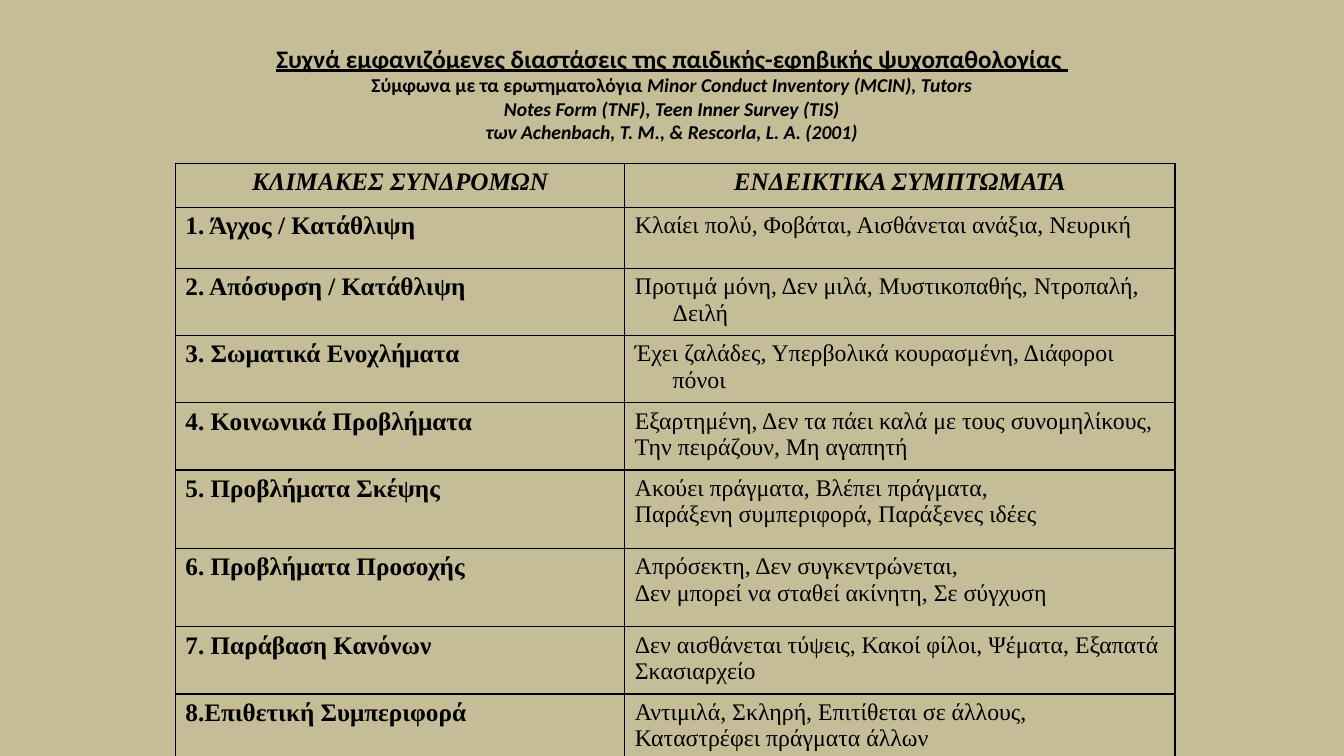
from lxml.etree import SubElement
from pptx import Presentation
from pptx.dml.color import RGBColor
from pptx.enum.text import MSO_ANCHOR, PP_ALIGN
from pptx.oxml.ns import qn
from pptx.util import Pt

SAND = RGBColor(0xC4, 0xBD, 0x97)
BLACK = RGBColor(0, 0, 0)
HEADING_FONT = "Calibri"
TABLE_FONT = "Times New Roman"
HANGING = Pt(27)

HEADING = "Συχνά εμφανιζόμενες διαστάσεις της παιδικής-εφηβικής ψυχοπαθολογίας "
SOURCE_LINES = [
    ("Σύμφωνα με τα ερωτηματολόγια ", "Minor Conduct Inventory (MCIN), Tutors"),
    ("", "Notes Form (TNF), Teen Inner Survey (TIS)"),
    ("", "των Achenbach, T. M., & Rescorla, L. A. (2001)"),
]

COLUMN_WIDTHS = [321, 393]
HEADER_HEIGHT = 31.5
HEADERS = ["ΚΛΙΜΑΚΕΣ ΣΥΝΔΡΟΜΩΝ", "ΕΝΔΕΙΚΤΙΚΑ ΣΥΜΠΤΩΜΑΤΑ"]
# row height, syndrome scale, symptoms
SYNDROMES = [
    (43.5, "1. Άγχος / Κατάθλιψη", "Κλαίει πολύ, Φοβάται, Αισθάνεται ανάξια, Νευρική"),
    (45.75, "2. Απόσυρση / Κατάθλιψη",
     "Προτιμά μόνη, Δεν μιλά, Μυστικοπαθής, Ντροπαλή, Δειλή"),
    (45.75, "3. Σωματικά Ενοχλήματα",
     "Έχει ζαλάδες, Υπερβολικά κουρασμένη, Διάφοροι πόνοι"),
    (45.75, "4. Κοινωνικά Προβλήματα",
     "Εξαρτημένη, Δεν τα πάει καλά με τους συνομηλίκους,\nΤην πειράζουν, Μη αγαπητή"),
    (56, "5. Προβλήματα Σκέψης",
     "Ακούει πράγματα, Βλέπει πράγματα,\nΠαράξενη συμπεριφορά, Παράξενες ιδέες"),
    (56, "6. Προβλήματα Προσοχής",
     "Απρόσεκτη, Δεν συγκεντρώνεται,\nΔεν μπορεί να σταθεί ακίνητη, Σε σύγχυση"),
    (45.75, "7. Παράβαση Κανόνων",
     "Δεν αισθάνεται τύψεις, Κακοί φίλοι, Ψέματα, Εξαπατά\nΣκασιαρχείο"),
    (45.75, "8.Επιθετική Συμπεριφορά",
     "Αντιμιλά, Σκληρή, Επιτίθεται σε άλλους,\nΚαταστρέφει πράγματα άλλων"),
]


def set_font(font, name, size, bold=False, italic=False, underline=False):
    font.name = name
    font.size = Pt(size)
    font.bold = bold
    font.italic = italic
    font.underline = underline
    font.color.rgb = BLACK


def add_heading(slide, left, top, width, height):
    box = slide.shapes.add_textbox(Pt(left), Pt(top), Pt(width), Pt(height))
    frame = box.text_frame
    frame.word_wrap = True
    frame.vertical_anchor = MSO_ANCHOR.MIDDLE
    frame.text = HEADING
    title = frame.paragraphs[0]
    title.alignment = PP_ALIGN.CENTER
    set_font(title.runs[0].font, HEADING_FONT, 18, bold=True, underline=True)
    for upright, slanted in SOURCE_LINES:
        line = frame.add_paragraph()
        line.alignment = PP_ALIGN.CENTER
        for words, italic in ((upright, False), (slanted, True)):
            if words:
                run = line.add_run()
                run.text = words
                set_font(run.font, HEADING_FONT, 14, bold=True, italic=italic)


def outline_cell(cell):
    properties = cell._tc.get_or_add_tcPr()
    for side in ("lnL", "lnR", "lnT", "lnB"):
        border = SubElement(properties, qn(f"a:{side}"), w=str(Pt(1)))
        fill = SubElement(border, qn("a:solidFill"))
        SubElement(fill, qn("a:srgbClr"), val=str(BLACK))


def fill_cell(cell, words, size, alignment=PP_ALIGN.LEFT, **style):
    """Write words with a hanging indent in an outlined, unfilled cell."""
    outline_cell(cell)
    cell.fill.background()
    cell.text_frame.text = words
    for paragraph in cell.text_frame.paragraphs:
        properties = paragraph._p.get_or_add_pPr()
        properties.set("marL", str(HANGING))
        properties.set("indent", str(-HANGING))
        paragraph.alignment = alignment
        for run in paragraph.runs:
            set_font(run.font, TABLE_FONT, size, **style)


def add_syndrome_table(slide, left, top):
    heights = [HEADER_HEIGHT] + [height for height, _, _ in SYNDROMES]
    table = slide.shapes.add_table(
        len(heights), len(COLUMN_WIDTHS), Pt(left), Pt(top),
        Pt(sum(COLUMN_WIDTHS)), Pt(sum(heights))).table
    table.horz_banding = False
    table.first_row = False
    for column, width in zip(table.columns, COLUMN_WIDTHS):
        column.width = Pt(width)
    for row, height in zip(table.rows, heights):
        row.height = Pt(height)
    for index, header in enumerate(HEADERS):
        fill_cell(table.cell(0, index), header, 18, PP_ALIGN.CENTER,
                  bold=True, italic=True)
    for index, (_, scale, symptoms) in enumerate(SYNDROMES, 1):
        fill_cell(table.cell(index, 0), scale, 18, bold=True)
        fill_cell(table.cell(index, 1), symptoms, 17)


def main():
    deck = Presentation()
    deck.slide_width, deck.slide_height = Pt(960), Pt(540)
    slide = deck.slides.add_slide(deck.slide_layouts[6])
    slide.background.fill.solid()
    slide.background.fill.fore_color.rgb = SAND
    add_heading(slide, 48, 21.6, 864, 90)
    add_syndrome_table(slide, 125.3, 116.6)
    deck.save("out.pptx")


if __name__ == "__main__":
    main()
